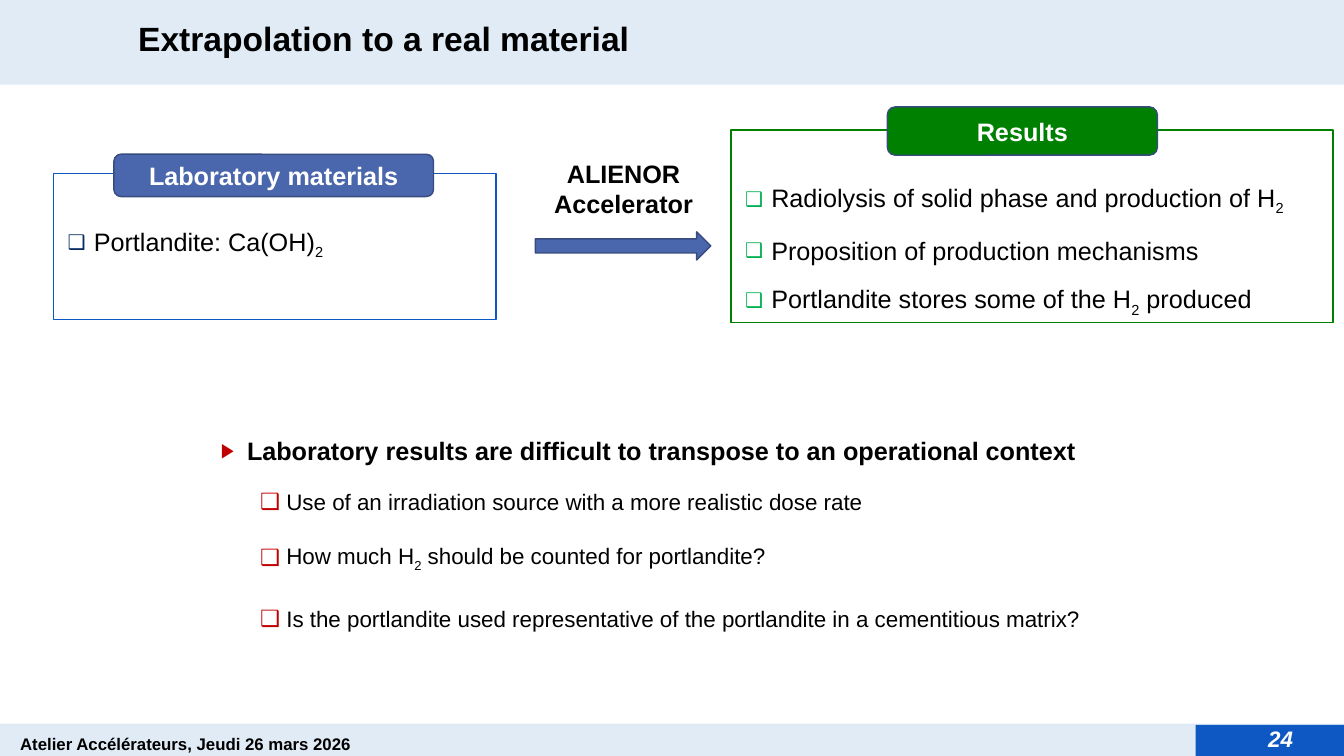
import pptx
import pptx.util
import pptx.dml.color
import pptx.enum.shapes
import pptx.enum.text
import pptx.oxml
import pptx.oxml.ns

Inches, Pt = pptx.util.Inches, pptx.util.Pt
SHAPE = pptx.enum.shapes.MSO_SHAPE
ALIGN = pptx.enum.text.PP_ALIGN
ANCHOR = pptx.enum.text.MSO_ANCHOR

COLORS = {
    "pale": "E0EBF6", "blue": "0E58C4", "slate": "4A66AC", "slate edge": "374B7F",
    "green": "008000", "bullet navy": "072C62", "bullet green": "00B050",
    "red": "C00000", "black": "000000", "white": "FFFFFF",
}

TITLE = "Extrapolation to a real material"
FOOTER = "Atelier Accélérateurs, Jeudi 26 mars 2026"
PAGE_NUMBER = "24"
ARROW_LABEL = "ALIENOR Accelerator"

# Bars: left, top, width, height, colour
BARS = [
    (0, 7.18, 13.33, 0.32, "pale"),
    (0, -0.03, 13.33, 0.87, "pale"),
    (11.86, 7.19, 1.47, 0.32, "blue"),
]

# A line of text is a list of pieces; ("2",) is a subscript
PANELS = [
    {
        "box": (0.53, 1.72, 4.39, 1.45), "edge": "blue", "bullet": "bullet navy",
        "label": "Laboratory materials", "label box": (1.13, 1.53, 3.17, 0.42),
        "label fill": "slate",
        "lines": [["Portlandite: Ca(OH)", ("2",)]],
    },
    {
        "box": (7.25, 1.29, 5.97, 1.91), "edge": "green", "bullet": "bullet green",
        "label": "Results", "label box": (8.8, 1.06, 2.68, 0.48),
        "label fill": "green",
        "lines": [
            ["Radiolysis of solid phase and production of H", ("2",)],
            ["Proposition of production mechanisms"],
            ["Portlandite stores some of the H", ("2",), " produced"],
        ],
    },
]

CONCLUSION = ["Laboratory results are difficult to transpose to an operational context"]
# Space before in points, pieces
QUESTIONS = [
    (16, ["Use of an irradiation source with a more realistic dose rate"]),
    (19.5, ["How much H", ("2",), " should be counted for portlandite?"]),
    (23, ["Is the portlandite used representative of the portlandite in a cementitious matrix?"]),
]
HANGING = 0.26


def color(name):
    return pptx.dml.color.RGBColor.from_string(COLORS[name])


def add_run(paragraph, text, size, bold=False, italic=False, ink="black"):
    run = paragraph.add_run()
    run.text = text
    run.font.name = "Arial"
    run.font.size = Pt(size)
    run.font.bold = bold
    run.font.italic = italic
    run.font.color.rgb = color(ink)
    return run


def set_frame(shape, insets=(0.1, 0.05, 0.1, 0.05), anchor=ANCHOR.TOP):
    frame = shape.text_frame
    frame.word_wrap = True
    frame.vertical_anchor = anchor
    frame.margin_left, frame.margin_top, frame.margin_right, frame.margin_bottom = map(Inches, insets)
    return frame


def add_shape(slide, kind, box, fill=None, edge=None):
    shape = slide.shapes.add_shape(kind, *map(Inches, box))
    shape.shadow.inherit = False
    if fill:
        shape.fill.solid()
        shape.fill.fore_color.rgb = color(fill)
    else:
        shape.fill.background()
    if edge:
        shape.line.color.rgb = color(edge)
        shape.line.width = Pt(1)
    else:
        shape.line.fill.background()
    return shape


def add_text(slide, box, text, size, **style):
    shape = slide.shapes.add_textbox(*map(Inches, box))
    paragraph = set_frame(shape).paragraphs[0]
    add_run(paragraph, text, size, True, **style)
    return shape, paragraph


def add_bulleted_line(frame, pieces, bullet, bullet_color, size=18, bold=False,
                      offset=0, bullet_size=80, space_before=0):
    paragraph = frame.paragraphs[0]
    if paragraph.runs:
        paragraph = frame.add_paragraph()
    paragraph.alignment = ALIGN.LEFT
    paragraph.space_before = Pt(space_before)
    properties = paragraph._p.get_or_add_pPr()
    properties.set("marL", str(Inches(offset + HANGING)))
    properties.set("indent", str(-Inches(HANGING)))
    namespace = pptx.oxml.ns.nsdecls("a")
    for xml in (
        f'<a:buClr {namespace}><a:srgbClr val="{COLORS[bullet_color]}"/></a:buClr>',
        f'<a:buSzPct {namespace} val="{bullet_size * 1000}"/>',
        f'<a:buFont {namespace} typeface="Arial"/>',
        f'<a:buChar {namespace} char="{bullet}"/>',
    ):
        properties.append(pptx.oxml.parse_xml(xml))
    for piece in pieces:
        if isinstance(piece, tuple):
            run = add_run(paragraph, piece[0], size, bold)
            run.font._element.set("baseline", "-25000")
        else:
            add_run(paragraph, piece, size, bold)


def add_panel(slide, panel):
    outline = add_shape(slide, SHAPE.RECTANGLE, panel["box"], edge=panel["edge"])
    frame = set_frame(outline, (0.14, 0.52, 0.14, 0.07))
    for index, pieces in enumerate(panel["lines"]):
        add_bulleted_line(frame, pieces, "❑", panel["bullet"],
                          space_before=13 if index else 0)
    label = add_shape(slide, SHAPE.ROUNDED_RECTANGLE, panel["label box"],
                      panel["label fill"], "slate edge")
    paragraph = set_frame(label, anchor=ANCHOR.MIDDLE).paragraphs[0]
    paragraph.alignment = ALIGN.CENTER
    add_run(paragraph, panel["label"], 18, True, ink="white")


def main():
    presentation = pptx.Presentation()
    presentation.slide_width, presentation.slide_height = Inches(13.33), Inches(7.5)
    slide = presentation.slides.add_slide(presentation.slide_layouts[5])

    for *box, fill in BARS:
        add_shape(slide, SHAPE.RECTANGLE, box, fill)

    title = slide.shapes.title
    title.left, title.top, title.width, title.height = map(Inches, (1.23, 0.2, 10.59, 0.43))
    paragraph = set_frame(title, (0.14, 0.05, 0.14, 0.05), ANCHOR.MIDDLE).paragraphs[0]
    paragraph.alignment = ALIGN.LEFT
    paragraph.line_spacing = 0.8
    add_run(paragraph, TITLE, 24, True)
    slide.shapes._spTree.append(title._element)  # in front of the bars

    footer, paragraph = add_text(slide, (0.14, 7.2, 6.03, 0.25), FOOTER, 12)
    set_frame(footer, (0.06, 0, 0.06, 0))
    paragraph.line_spacing = 1.4

    for panel in PANELS:
        add_panel(slide, panel)

    add_shape(slide, SHAPE.RIGHT_ARROW, (5.31, 2.3, 1.74, 0.28), "slate", "slate edge")
    _, paragraph = add_text(slide, (5.3, 1.52, 1.77, 0.71), ARROW_LABEL, 18)
    paragraph.alignment = ALIGN.CENTER

    discussion = slide.shapes.add_textbox(*map(Inches, (2.05, 4.09, 10.25, 2.31)))
    frame = set_frame(discussion, (0.14, 0.23, 0.14, 0.07))
    add_bulleted_line(frame, CONCLUSION, "▶", "red", bold=True)
    for space_before, pieces in QUESTIONS:
        add_bulleted_line(frame, pieces, "❑", "red", size=16, offset=0.39,
                          bullet_size=100, space_before=space_before)

    add_text(slide, (12.48, 7.14, 0.47, 0.37), PAGE_NUMBER, 16, italic=True, ink="white")
    presentation.save("out.pptx")


if __name__ == "__main__":
    main()
